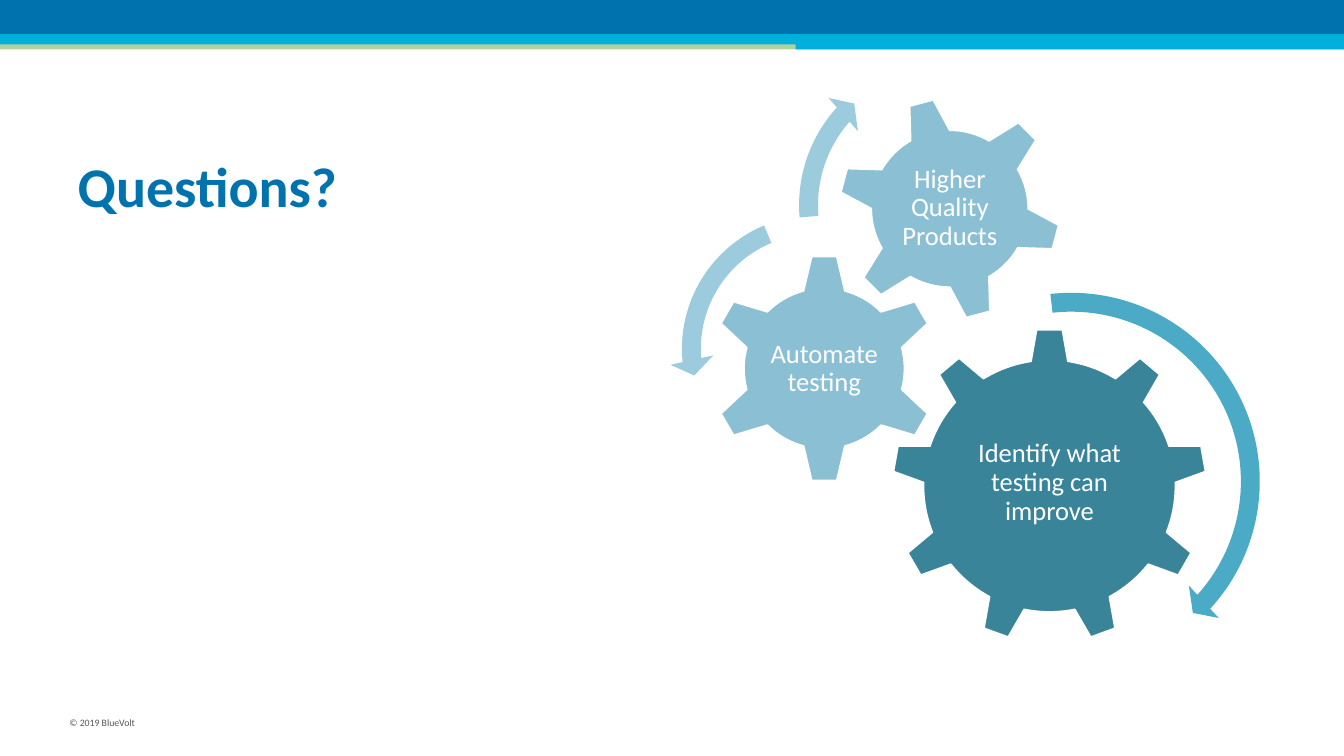
from lxml import etree
from pptx import Presentation
from pptx.dml.color import RGBColor
from pptx.enum.shapes import MSO_SHAPE as SHAPE
from pptx.enum.text import MSO_ANCHOR as ANCHOR, PP_ALIGN as ALIGN
from pptx.oxml.ns import qn
from pptx.util import Inches, Pt

prs = Presentation()
prs.slide_width, prs.slide_height = Inches(13.333), Inches(7.5)
s = prs.slides.add_slide(prs.slide_layouts[5])
unit = prs.slide_width / 100  # grid: 100 columns, square cells


def grid(*cells):
    return [round(c * unit) for c in cells]


def paint(fmt, color):
    """Give a fill or a font one solid colour."""
    if hasattr(fmt, "solid"):
        fmt.solid()
        fmt.fore_color.rgb = RGBColor.from_string(color)
    else:
        fmt.color.rgb = RGBColor.from_string(color)


# Header bands: left, top, width, height, colour, opacity in percent
bands = [
    (0, 3, 100, 0.68, "63A537", 50),
    (0, 0, 100, 2.55, "0073AE", 100),
    (0, 2.55, 100, 0.75, "00AFDB", 100),
    (59.19, 2.93, 40.81, 0.75, "00AFDB", 100),
]
for x, y, w, h, color, opacity in bands:
    sp = s.shapes.add_shape(SHAPE.RECTANGLE, *grid(x, y, w, h))
    sp.shadow.inherit = False
    paint(sp.fill, color)
    sp.line.fill.background()
    if opacity < 100:
        clr = sp._element.spPr.find(".//" + qn("a:srgbClr"))
        etree.SubElement(clr, qn("a:alpha"), val=str(opacity * 1000))

# Title
title = s.shapes.title
title.left, title.top, title.width, title.height = grid(5.03, 9.38, 90, 8.78)
tf = title.text_frame
tf.vertical_anchor = ANCHOR.MIDDLE
p = tf.paragraphs[0]
p.alignment = ALIGN.LEFT
r = p.add_run()
r.text = "Questions?"
r.font.name, r.font.size, r.font.bold = "Calibri", Pt(40), True
paint(r.font, "0073AE")

# Gears and circling arrows: kind, centre, diameter, colour, rotation, adjustments
GEAR_PALE, ARROW_PALE = "8BC0D4", "9BCBDC"
wheels = [
    (SHAPE.GEAR_9, 78.09, 36.16, 23.41, "3A8499", 0, []),
    (SHAPE.GEAR_6, 61.33, 27.42, 17.03, GEAR_PALE, 0, []),
    (SHAPE.GEAR_6, 70.67, 15.53, 16.65, GEAR_PALE, -15, []),
    (SHAPE.CIRCULAR_ARROW, 79.71, 35.82, 29.93, "4BABC6", 0,
     [0.04688, 2.99, 25.356, 158.2, 0.0547]),
    (SHAPE.LEFT_CIRCULAR_ARROW, 60.69, 25.96, 21.76, ARROW_PALE, 0,
     [0.0645, 4.3, 104.891, 148.378, 0.075]),
    (SHAPE.CIRCULAR_ARROW, 70.26, 15.27, 23.48, ARROW_PALE, 0,
     [0.06, 3.941, 133.138, 105.082, 0.07]),
]
for kind, cx, cy, d, color, angle, adjustments in wheels:
    sp = s.shapes.add_shape(kind, *grid(cx - d / 2, cy - d / 2, d, d))
    sp.shadow.inherit = False
    sp.rotation = angle
    paint(sp.fill, color)
    for i, value in enumerate(adjustments):
        sp.adjustments[i] = value
    if adjustments:
        sp.line.fill.background()
    else:
        paint(sp.line.fill, "FFFFFF")
        sp.line.width = Pt(1)

# Gear labels: text, centre, width, height
labels = [
    ("Identify what testing can improve", 78.09, 35.92, 13.95, 12),
    ("Automate testing", 61.33, 27.45, 8.6, 8.4),
    ("Higher Quality Products", 70.67, 15.5, 9.38, 9.38),
]
for text, cx, cy, w, h in labels:
    tf = s.shapes.add_textbox(*grid(cx - w / 2, cy - h / 2, w, h)).text_frame
    tf.word_wrap = True
    tf.vertical_anchor = ANCHOR.MIDDLE
    tf.margin_left = tf.margin_right = tf.margin_top = tf.margin_bottom = Inches(0.03)
    p = tf.paragraphs[0]
    p.alignment, p.line_spacing = ALIGN.CENTER, 0.9
    r = p.add_run()
    r.text = text
    r.font.name, r.font.size = "Calibri", Pt(19)
    paint(r.font, "FFFFFF")

# Copyright line
tf = s.shapes.add_textbox(*grid(4.43, 52.96, 21.08, 1.65)).text_frame
tf.word_wrap = True
r = tf.paragraphs[0].add_run()
r.text = "© 2019 BlueVolt"
r.font.name, r.font.size = "Calibri", Pt(7)
paint(r.font, "595959")

prs.save("out.pptx")
